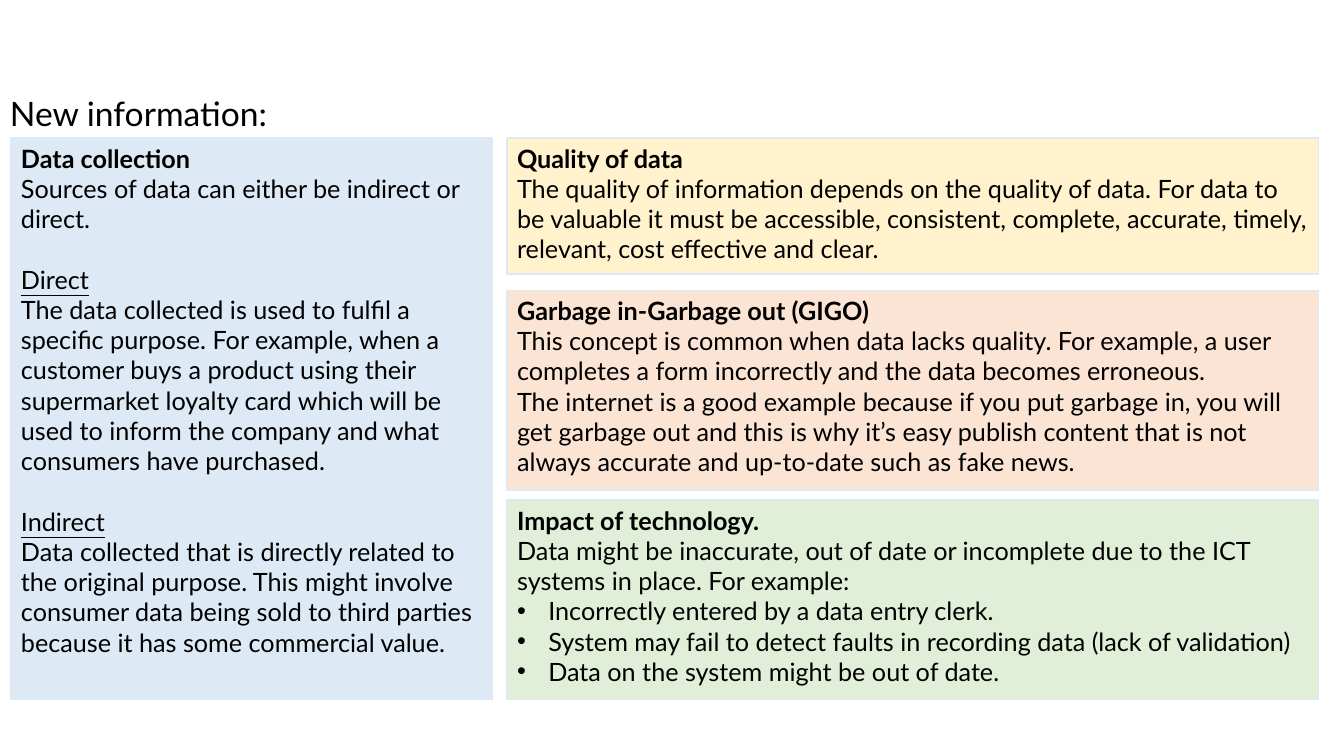
from dataclasses import dataclass
from lxml import etree
from pptx import Presentation
from pptx.dml.color import RGBColor as RGB
from pptx.enum.shapes import MSO_SHAPE as SHAPE
from pptx.enum.text import MSO_ANCHOR as ANCHOR, PP_ALIGN as ALIGN
from pptx.oxml.ns import qn
from pptx.util import Inches, Pt

HEADING = "New information:"
COLLECTION = [
    ("title", "Data collection"),
    ("body", "Sources of data can either be indirect or direct."),
    ("term", "Direct"),
    ("body", "The data collected is used to fulfil a specific purpose. For example, when a customer "
             "buys a product using their supermarket loyalty card which will be used to inform the "
             "company and what consumers have purchased."),
    ("term", "Indirect"),
    ("body", "Data collected that is directly related to the original purpose. This might involve "
             "consumer data being sold to third parties because it has some commercial value."),
]
QUALITY = [
    ("title", "Quality of data"),
    ("body", "The quality of information depends on the quality of data. For data to be valuable it "
             "must be accessible, consistent, complete, accurate, timely, relevant, cost effective "
             "and clear."),
]
GIGO = [
    ("title", "Garbage in-Garbage out (GIGO)"),
    ("body", "This concept is common when data lacks quality. For example, a user completes a form "
             "incorrectly and the data becomes erroneous."),
    ("body", "The internet is a good example because if you put garbage in, you will get garbage out "
             "and this is why it’s easy publish content that is not always accurate and up-to-date "
             "such as fake news."),
]
IMPACT = [
    ("title", "Impact of technology."),
    ("body", "Data might be inaccurate, out of date or incomplete due to the ICT systems in place. "
             "For example:"),
    ("bullet", "Incorrectly entered by a data entry clerk."),
    ("bullet", "System may fail to detect faults in recording data (lack of validation)"),
    ("bullet", "Data on the system might be out of date."),
]


@dataclass(frozen=True)
class Theme:
    font: str = "Lato"
    heading: int = 24
    text: int = 18
    term_gap: float = 21.6
    indent: float = 0.31
    ink: str = "000000"
    line: str = "DDEAF6"
    blue: str = "DDEAF6"
    yellow: str = "FFF2CC"
    orange: str = "FBE4D4"
    green: str = "E1EFD8"


T = Theme()
COLUMNS = [(0.11, 4.77), (5.03, 8.05)]
TOP, BOTTOM = 1.37, 6.94
PANELS = [
    (0, TOP, BOTTOM - TOP, T.blue, COLLECTION),
    (1, TOP, 1.35, T.yellow, QUALITY),
    (1, 2.88, 1.98, T.orange, GIGO),
    (1, BOTTOM - 1.98, 1.98, T.green, IMPACT),
]


def style(p, size):
    p.alignment = ALIGN.LEFT
    p.font.name = T.font
    p.font.size = Pt(size)
    p.font.color.rgb = RGB.from_string(T.ink)


def add_bullet(p):
    pPr = p._p.get_or_add_pPr()
    pPr.set("marL", str(Inches(T.indent)))
    pPr.set("indent", str(-Inches(T.indent)))
    font = etree.Element(qn("a:buFont"), typeface="Arial")
    mark = etree.Element(qn("a:buChar"), char="•")
    pPr.insert(0, font)
    font.addnext(mark)


def add_panel(slide, column, top, height, fill, lines):
    left, width = COLUMNS[column]
    sp = slide.shapes.add_shape(SHAPE.RECTANGLE, *map(Inches, (left, top, width, height)))
    sp.shadow.inherit = False
    sp.fill.solid()
    sp.fill.fore_color.rgb = RGB.from_string(fill)
    sp.line.color.rgb = RGB.from_string(T.line)
    sp.line.width = Pt(1)
    tf = sp.text_frame
    tf.word_wrap = True
    tf.vertical_anchor = ANCHOR.TOP
    for i, (role, text) in enumerate(lines):
        p = tf.add_paragraph() if i else tf.paragraphs[0]
        p.text = text
        style(p, T.text)
        p.font.bold = role == "title"
        p.font.underline = role == "term"
        if role == "term":
            p.space_before = Pt(T.term_gap)
        elif role == "bullet":
            add_bullet(p)


def main():
    prs = Presentation()
    prs.slide_width, prs.slide_height = Inches(13.33), Inches(7.5)
    slide = prs.slides.add_slide(prs.slide_layouts[6])
    tf = slide.shapes.add_textbox(0, Inches(TOP - 0.5), Inches(6.2), Inches(0.5)).text_frame
    tf.word_wrap = True
    tf.text = HEADING
    style(tf.paragraphs[0], T.heading)
    for panel in PANELS:
        add_panel(slide, *panel)
    prs.save("out.pptx")


if __name__ == "__main__":
    main()
